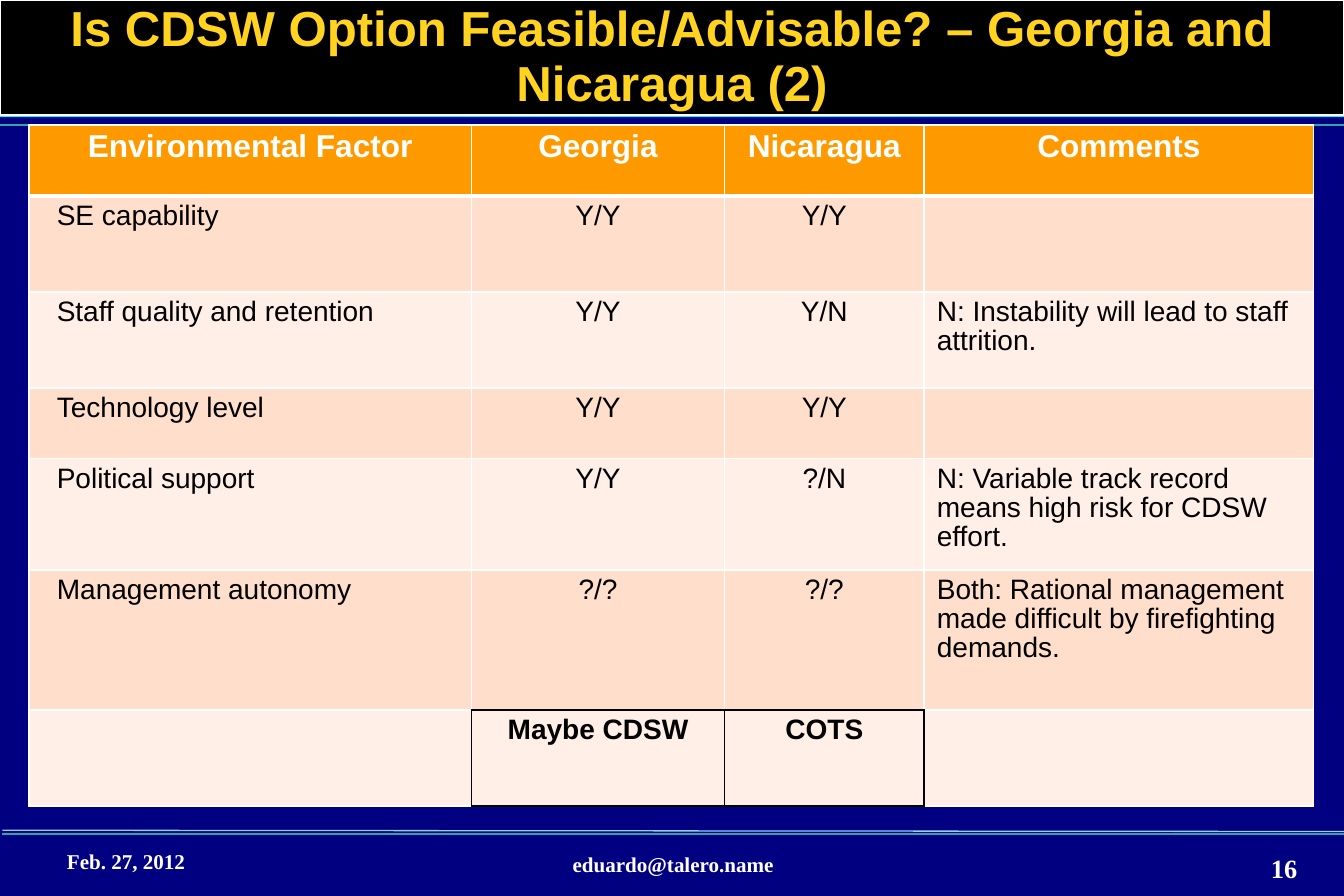
"""Build the slide that weighs the CDSW option for Georgia and Nicaragua."""
from dataclasses import dataclass

from lxml import etree
from pptx import Presentation
from pptx.dml.color import RGBColor
from pptx.enum.shapes import MSO_CONNECTOR
from pptx.enum.text import MSO_ANCHOR, MSO_AUTO_SIZE, PP_ALIGN
from pptx.oxml.ns import qn
from pptx.util import Inches, Pt

LEFT, CENTER, RIGHT = PP_ALIGN.LEFT, PP_ALIGN.CENTER, PP_ALIGN.RIGHT
MIDDLE = MSO_ANCHOR.MIDDLE
NO_FIT = MSO_AUTO_SIZE.NONE
STRAIGHT = MSO_CONNECTOR.STRAIGHT


@dataclass(frozen=True)
class Theme:
    navy: str = "000080"
    black: str = "000000"
    white: str = "FFFFFF"
    gold: str = "FFD320"
    orange: str = "FF9900"
    peach: str = "FFDECC"
    cream: str = "FFEFE7"
    cyan: str = "00FFFF"
    teal: str = "33A3A3"
    sky: str = "99CCFF"
    sans: str = "Arial"
    serif: str = "Times New Roman"
    title: int = 28
    head: int = 18
    body: int = 16
    page: int = 15
    foot: int = 12


theme = Theme()


def style(para, face, size, color, bold, align, space):
    para.alignment = align
    para.line_spacing = space
    font = para.font
    font.name, font.size, font.bold = face, Pt(size), bold
    font.color.rgb = RGBColor.from_string(color)


def border(cell, tag, color, width):
    line = etree.SubElement(cell._tc.get_or_add_tcPr(), qn(tag), w=str(Pt(width)))
    fill = etree.SubElement(line, qn("a:solidFill"))
    etree.SubElement(fill, qn("a:srgbClr"), val=color)


deck = Presentation()
deck.slide_width, deck.slide_height = Inches(10.63), Inches(7.09)
slide = deck.slides.add_slide(deck.slide_layouts[5])
back = slide.background.fill
back.solid()
back.fore_color.rgb = RGBColor.from_string(theme.navy)

rules = [
    (0, 0.92, 0.92, theme.cyan),
    (0, 0.99, 0.99, theme.teal),
    (0.02, 6.57, 6.58, theme.sky),
    (0.02, 6.6, 6.6, theme.teal),
]
for left, start, end, color in rules:
    rule = slide.shapes.add_connector(
        STRAIGHT, Inches(left), Inches(start), Inches(left + 10.63), Inches(end))
    rule.line.color.rgb = RGBColor.from_string(color)
    rule.line.width = Pt(0.75)
    etree.SubElement(rule._element.spPr, qn("a:effectLst"))

title = slide.shapes.title
title.left, title.top = Inches(0), Inches(0)
title.width, title.height = Inches(10.63), Inches(0.91)
title.fill.solid()
title.fill.fore_color.rgb = RGBColor.from_string(theme.black)
title.line.color.rgb = RGBColor.from_string(theme.white)
title.line.width = Pt(0.75)
frame = title.text_frame
frame.text = "Is CDSW Option Feasible/Advisable? – Georgia and Nicaragua (2)"
frame.word_wrap, frame.auto_size = True, NO_FIT
frame.vertical_anchor = MIDDLE
frame.margin_left = frame.margin_right = frame.margin_top = frame.margin_bottom = 0
style(frame.paragraphs[0], theme.sans, theme.title, theme.gold, True, CENTER, 0.93)

notes = [
    ("Feb. 27, 2012", 0.53, 6.73, 2.47, 0.29, theme.foot, LEFT),
    ("eduardo@talero.name", 3.64, 6.75, 3.37, 0.29, theme.foot, CENTER),
    ("16", 9.25, 6.76, 1.01, 0.24, theme.page, RIGHT),
]
for text, left, top, width, height, size, align in notes:
    box = slide.shapes.add_textbox(
        Inches(left), Inches(top), Inches(width), Inches(height))
    frame = box.text_frame
    frame.text = text
    frame.word_wrap = True
    frame.margin_left = frame.margin_right = frame.margin_top = frame.margin_bottom = 0
    style(frame.paragraphs[0], theme.serif, size, theme.white, True, align, 0.95)

rows = [
    ("Environmental Factor", "Georgia", "Nicaragua", "Comments"),
    ("SE capability", "Y/Y", "Y/Y", ""),
    ("Staff quality and retention", "Y/Y", "Y/N",
     "N: Instability will lead to staff attrition."),
    ("Technology level", "Y/Y", "Y/Y", ""),
    ("Political support", "Y/Y", "?/N",
     "N: Variable track record means high risk for CDSW effort."),
    ("Management autonomy", "?/?", "?/?",
     "Both: Rational management made difficult by firefighting demands."),
    ("", "Maybe CDSW", "COTS", ""),
]
widths = [3.5, 2, 1.58, 3.08]
heights = [0.56, 0.76, 0.76, 0.56, 0.88, 1.11, 0.76]
sides = [("a:lnL", 0, -1), ("a:lnR", 0, 1), ("a:lnT", -1, 0), ("a:lnB", 1, 0)]
last = len(rows) - 1
boxed = {(last, 1), (last, 2)}

table = slide.shapes.add_table(
    len(rows), len(widths), Inches(0.23), Inches(0.99),
    Inches(sum(widths)), Inches(sum(heights))).table
table.horz_banding = False
for column, width in zip(table.columns, widths):
    column.width = Inches(width)
for line, height in zip(table.rows, heights):
    line.height = Inches(height)

for r, texts in enumerate(rows):
    head = r == 0
    shade = theme.orange if head else theme.peach if r % 2 else theme.cream
    for c, text in enumerate(texts):
        cell = table.cell(r, c)
        for tag, down, over in sides:
            near = (r + down, c + over)
            color = theme.black if boxed & {(r, c), near} else theme.white
            border(cell, tag, color, 3 if {r, near[0]} == {0, 1} else 1)
        cell.fill.solid()
        cell.fill.fore_color.rgb = RGBColor.from_string(shade)
        cell.text = text
        if c == 0 and not head:
            cell.margin_left = Inches(0.22)
        style(cell.text_frame.paragraphs[0], theme.sans,
              theme.head if head else theme.body,
              theme.white if head else theme.black,
              head or r == last,
              CENTER if head or c in (1, 2) else LEFT, 0.93)

deck.save("out.pptx")
